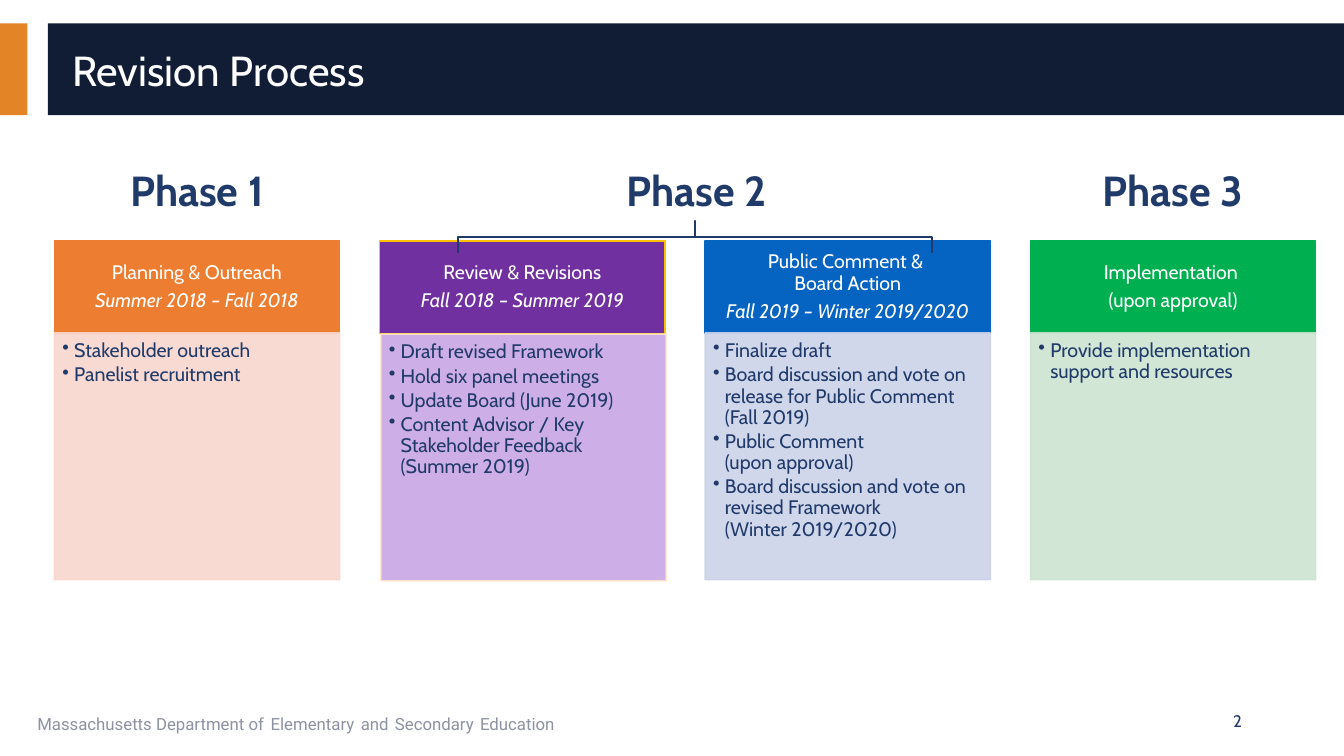
from dataclasses import dataclass

from lxml.etree import SubElement
from pptx import Presentation
from pptx.dml.color import RGBColor
from pptx.enum.shapes import MSO_SHAPE
from pptx.enum.text import MSO_ANCHOR, PP_ALIGN
from pptx.oxml.ns import qn
from pptx.shapes.autoshape import Shape
from pptx.slide import Slide
from pptx.text.text import TextFrame, _Paragraph
from pptx.util import Cm, Pt

NAVY = "203B6A"
WHITE = "FFFFFF"
GREY = "8D92A1"

STAGE_LEFT = 1.37
STAGE_PITCH = 8.2
STAGE_WIDTH = 7.19
HEADER_TOP = 6.07
HEADER_HEIGHT = 2.33
BODY_TOP = 8.39
BODY_HEIGHT = 6.22


@dataclass
class Box:
    left: float
    top: float
    width: float
    height: float


@dataclass
class Stage:
    name: str
    period: str
    tasks: list[str]
    header_fill: str
    header_line: str
    body_fill: str
    body_line: str
    italic_period: bool = True
    body_offset: float = 0


@dataclass
class Label:
    text: str
    box: Box
    size: float
    color: str = NAVY
    bold: bool = False
    alignment: PP_ALIGN = PP_ALIGN.LEFT
    anchor: MSO_ANCHOR = MSO_ANCHOR.TOP


STAGES = [
    Stage("Planning & Outreach", "Summer 2018 – Fall 2018",
          ["Stakeholder outreach", "Panelist recruitment"],
          "ED7D31", "ED7D31", "F8D7CE", "F8D7CE"),
    Stage("Review & Revisions", "Fall 2018 – Summer 2019",
          ["Draft revised Framework", "Hold six panel meetings", "Update Board (June 2019)",
           "Content Advisor / Key Stakeholder Feedback (Summer 2019)"],
          "7030A0", "FFC000", "C9A6E4", "FFE8CC", body_offset=0.03),
    Stage("Public Comment & \vBoard Action", "Fall 2019 – Winter 2019/2020",
          ["Finalize draft",
           "Board discussion and vote on release for Public Comment (Fall 2019)",
           "Public Comment \v(upon approval)",
           "Board discussion and vote on revised Framework \v(Winter 2019/2020)"],
          "0563C1", "0563C1", "CCD3E9", "CCD3E9"),
    Stage("Implementation ", "(upon approval)",
          ["Provide implementation support and resources"],
          "00B050", "00B050", "CCE4D0", "CCE4D0", italic_period=False),
]

LABELS = [
    Label("Revision Process", Box(1.57, 0.81, 31.6, 1.88), 30, WHITE, anchor=MSO_ANCHOR.MIDDLE),
    Label("2", Box(23.93, 17.65, 7.62, 1.02), 12,
          alignment=PP_ALIGN.RIGHT, anchor=MSO_ANCHOR.MIDDLE),
    *[Label(name, Box(left, 4.01, width, 1.55), 30, bold=True, alignment=PP_ALIGN.CENTER)
      for name, left, width in [("Phase 1", 0.28, 9.37), ("Phase 2", 7.04, 21.03),
                                ("Phase 3", 24.87, 9.37)]],
]

FOOTER_PARTS = ["Massachusetts Department of", "Elementary", "and", "Secondary", "Education"]


def color_of(value: str) -> RGBColor:
    return RGBColor.from_string(value)


def format_runs(paragraph: _Paragraph, size: float, color: str, bold: bool = False,
                italic: bool = False, font: str = "Cabin") -> None:
    for run in paragraph.runs:
        run.font.name = font
        run.font.size = Pt(size)
        run.font.bold = bold
        run.font.italic = italic
        run.font.color.rgb = color_of(color)


def set_margins(frame: TextFrame, left: float, top: float, right: float, bottom: float) -> None:
    frame.margin_left, frame.margin_top = Cm(left), Cm(top)
    frame.margin_right, frame.margin_bottom = Cm(right), Cm(bottom)


def set_alpha(shape: Shape, percent: int) -> None:
    for color in shape._element.spPr.iter(qn("a:srgbClr")):
        SubElement(color, qn("a:alpha")).set("val", str(percent * 1000))


def add_bullet(paragraph: _Paragraph) -> None:
    properties = paragraph._p.get_or_add_pPr()
    properties.set("marL", str(Cm(0.3)))
    properties.set("indent", str(-Cm(0.3)))
    SubElement(properties, qn("a:buChar")).set("char", "•")


def add_rectangle(slide: Slide, box: Box, fill: str, line: str | None = None) -> Shape:
    shape = slide.shapes.add_shape(MSO_SHAPE.RECTANGLE, Cm(box.left), Cm(box.top),
                                   Cm(box.width), Cm(box.height))
    shape.shadow.inherit = False
    shape.fill.solid()
    shape.fill.fore_color.rgb = color_of(fill)
    if line is None:
        shape.line.fill.background()
    else:
        shape.line.color.rgb = color_of(line)
        shape.line.width = Pt(1)
    return shape


def add_text_box(slide: Slide, box: Box) -> TextFrame:
    frame = slide.shapes.add_textbox(Cm(box.left), Cm(box.top),
                                     Cm(box.width), Cm(box.height)).text_frame
    frame.word_wrap = True
    return frame


def add_label(slide: Slide, label: Label) -> None:
    frame = add_text_box(slide, label.box)
    frame.vertical_anchor = label.anchor
    frame.text = label.text
    paragraph = frame.paragraphs[0]
    paragraph.alignment = label.alignment
    format_runs(paragraph, label.size, label.color, label.bold)


def add_footer(slide: Slide) -> None:
    paragraph = add_text_box(slide, Box(0.69, 17.65, 21.44, 1.02)).paragraphs[0]
    for index, part in enumerate(FOOTER_PARTS):
        if index:
            paragraph.add_run().text = " "
        paragraph.add_run().text = part
    format_runs(paragraph, 12, GREY, font="Roboto")
    for space in paragraph.runs[1::2]:
        space.font.size = Pt(18)
        space.font.color.rgb = color_of(NAVY)


def add_stage(slide: Slide, stage: Stage, left: float) -> None:
    header = add_rectangle(slide, Box(left, HEADER_TOP, STAGE_WIDTH, HEADER_HEIGHT),
                           stage.header_fill, stage.header_line)
    frame = header.text_frame
    set_margins(frame, 0.28, 0.16, 0.28, 0.16)
    frame.vertical_anchor = MSO_ANCHOR.MIDDLE
    frame.paragraphs[0].text = stage.name
    frame.add_paragraph().text = stage.period
    for paragraph in frame.paragraphs:
        paragraph.alignment = PP_ALIGN.CENTER
        paragraph.line_spacing = 0.9
        paragraph.space_after = Pt(4.9)
        format_runs(paragraph, 14, WHITE)
    format_runs(frame.paragraphs[1], 14, WHITE, italic=stage.italic_period)

    body = add_rectangle(slide, Box(left + stage.body_offset, BODY_TOP + stage.body_offset,
                                    STAGE_WIDTH, BODY_HEIGHT), stage.body_fill, stage.body_line)
    set_alpha(body, 90)
    frame = body.text_frame
    set_margins(frame, 0.2, 0.2, 0.28, 0.3)
    frame.vertical_anchor = MSO_ANCHOR.TOP
    for index, task in enumerate(stage.tasks):
        paragraph = frame.add_paragraph() if index else frame.paragraphs[0]
        paragraph.text = task
        paragraph.level = 1
        paragraph.alignment = PP_ALIGN.LEFT
        paragraph.line_spacing = 0.9
        paragraph.space_after = Pt(2.1)
        add_bullet(paragraph)
        format_runs(paragraph, 14, NAVY)


def add_phase_brace(slide: Slide) -> None:
    brace = slide.shapes.add_shape(MSO_SHAPE.RIGHT_BRACE, Cm(17.11), Cm(0), Cm(0.81), Cm(11.94))
    brace.shadow.inherit = False
    brace.rotation = 270
    brace.adjustments[0] = 0
    brace.adjustments[1] = 0.5
    brace.fill.background()
    brace.line.color.rgb = color_of(NAVY)
    brace.line.width = Pt(1.5)


def main() -> None:
    presentation = Presentation()
    presentation.slide_width = Cm(33.87)
    presentation.slide_height = Cm(19.05)
    slide = presentation.slides.add_slide(presentation.slide_layouts[6])
    add_rectangle(slide, Box(0, 0.59, 0.69, 2.31), "E38526")
    add_rectangle(slide, Box(1.21, 0.59, 32.66, 2.31), "101D35")
    add_footer(slide)
    for index, stage in enumerate(STAGES):
        add_stage(slide, stage, STAGE_LEFT + index * STAGE_PITCH)
    for label in LABELS:
        add_label(slide, label)
    add_phase_brace(slide)
    presentation.save("out.pptx")


if __name__ == "__main__":
    main()
